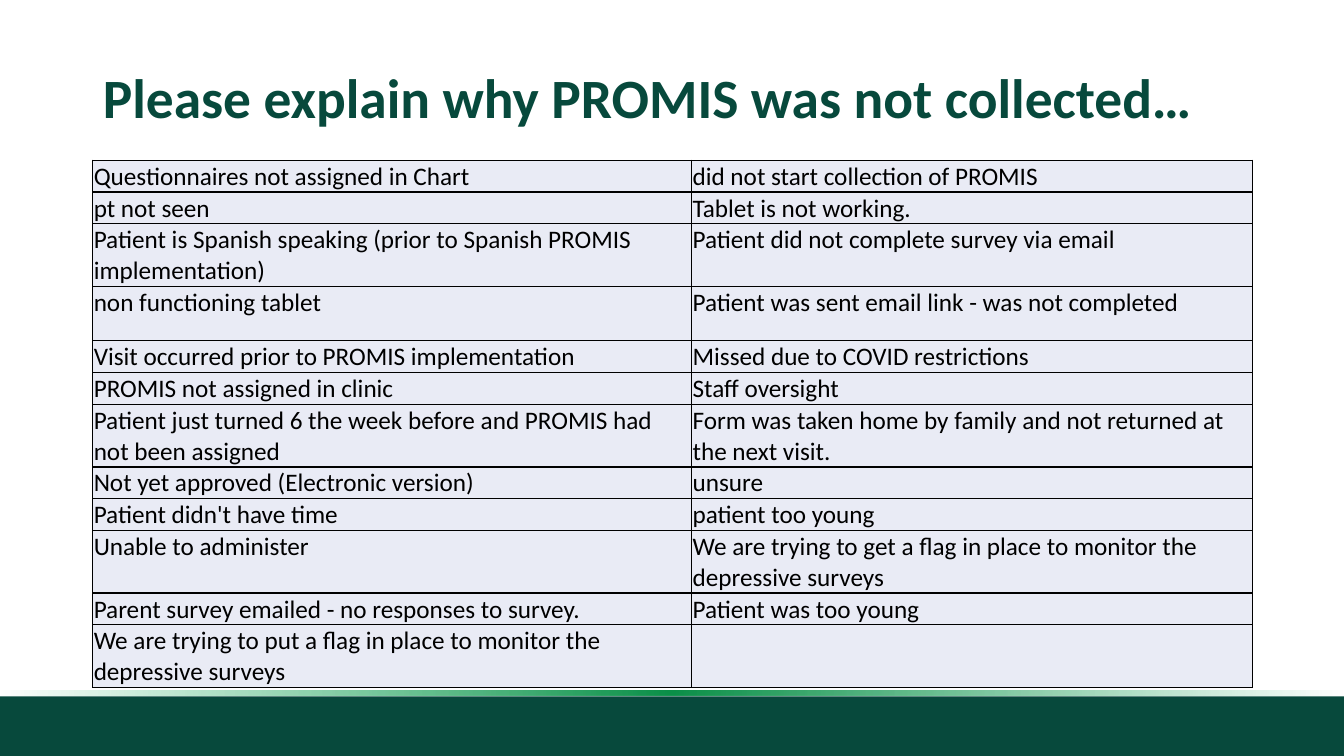
from lxml import etree
from pptx import Presentation
from pptx.dml.color import RGBColor
from pptx.enum.shapes import MSO_SHAPE
from pptx.enum.text import MSO_ANCHOR, MSO_AUTO_SIZE, PP_ALIGN
from pptx.oxml.ns import qn
from pptx.util import Inches, Pt

RECT = MSO_SHAPE.RECTANGLE
MIDDLE, TOP = MSO_ANCHOR.MIDDLE, MSO_ANCHOR.TOP
LEFT = PP_ALIGN.LEFT
FIXED = MSO_AUTO_SIZE.NONE

WIDTH, HEIGHT = Inches(13.33), Inches(7.5)
MARGIN, BODY = Inches(0.92), Inches(11.5)
COLORS = {
    "pine": "07493C",
    "ink": "000000",
    "cell": "E9EBF5",
    "start": "0D9D4F",
    "mid": "0C9049",
    "end": "0FAB56",
}
SHARES = (0.5165, 0.4835)
LOW, TALL = Inches(0.28), Inches(0.54)
TALL_ROWS = {2, 3, 6, 9, 11}
REASONS = [
    ("Questionnaires not assigned in Chart", "did not start collection of PROMIS"),
    ("pt not seen", "Tablet is not working."),
    ("Patient is Spanish speaking (prior to Spanish PROMIS implementation)",
     "Patient did not complete survey via email"),
    ("non functioning tablet", "Patient was sent email link - was not completed"),
    ("Visit occurred prior to PROMIS implementation",
     "Missed due to COVID restrictions"),
    ("PROMIS not assigned in clinic", "Staff oversight"),
    ("Patient just turned 6 the week before and PROMIS had not been assigned",
     "Form was taken home by family and not returned at the next visit."),
    ("Not yet approved (Electronic version)", "unsure"),
    ("Patient didn't have time", "patient too young"),
    ("Unable to administer",
     "We are trying to get a flag in place to monitor the depressive surveys"),
    ("Parent survey emailed - no responses to survey.", "Patient was too young"),
    ("We are trying to put a flag in place to monitor the depressive surveys", ""),
]


def color(name):
    return RGBColor.from_string(COLORS[name])


def write(frame, text, size=18, ink="ink", bold=False, spacing=None):
    para = frame.paragraphs[0]
    para.alignment = LEFT
    if spacing:
        para.line_spacing = spacing
    if not text:
        return
    run = para.add_run()
    run.text = text
    font = run.font
    font.name, font.size, font.bold = "Calibri", Pt(size), bold
    font.color.rgb = color(ink)


def add_band(slide, top, height):
    band = slide.shapes.add_shape(RECT, 0, top, WIDTH, height)
    band.shadow.inherit = False
    band.line.fill.background()
    band.fill.solid()
    band.fill.fore_color.rgb = color("pine")
    return band


def fade(band):
    """Fill the band with a green that is clear at both ends."""
    band.fill.gradient()
    band.fill.gradient_angle = 180
    stops = band.fill._fill._gradFill.find(qn("a:gsLst"))
    for stop in list(stops):
        stops.remove(stop)
    for place, name, alpha in ((0, "start", 0), (50, "mid", 100), (100, "end", 0)):
        stop = etree.SubElement(stops, qn("a:gs"), pos=str(place * 1000))
        tint = etree.SubElement(stop, qn("a:srgbClr"), val=COLORS[name])
        etree.SubElement(tint, qn("a:alpha"), val=str(alpha * 1000))


def add_title(slide, text):
    title = slide.shapes.title
    title.left, title.top = MARGIN, Inches(0.4)
    title.width, title.height = BODY, Inches(1.19)
    frame = title.text_frame
    frame.word_wrap, frame.auto_size = True, FIXED
    frame.vertical_anchor = MIDDLE
    write(frame, text, size=39.6, ink="pine", bold=True, spacing=0.9)


def add_borders(cell):
    props = cell._tc.get_or_add_tcPr()
    for place, side in enumerate(("lnL", "lnR", "lnT", "lnB")):
        line = etree.Element(qn(f"a:{side}"), w=str(Pt(1)))
        fill = etree.SubElement(line, qn("a:solidFill"))
        etree.SubElement(fill, qn("a:srgbClr"), val=COLORS["ink"])
        props.insert(place, line)


def format_cell(cell, text):
    cell.margin_left = cell.margin_right = cell.margin_top = Inches(0.01)
    cell.margin_bottom = 0
    cell.vertical_anchor = TOP
    cell.fill.solid()
    cell.fill.fore_color.rgb = color("cell")
    add_borders(cell)
    write(cell.text_frame, text)


def add_grid(slide, rows):
    heights = [TALL if i in TALL_ROWS else LOW for i in range(len(rows))]
    table = slide.shapes.add_table(
        len(rows), len(SHARES), MARGIN, Inches(1.59), BODY, sum(heights)).table
    table.first_row = table.horz_banding = False
    for column, share in zip(table.columns, SHARES):
        column.width = int(BODY * share)
    for row, height, texts in zip(table.rows, heights, rows):
        row.height = height
        for cell, text in zip(row.cells, texts):
            format_cell(cell, text)


def main():
    deck = Presentation()
    deck.slide_width, deck.slide_height = WIDTH, HEIGHT
    slide = deck.slides.add_slide(deck.slide_layouts[5])
    add_band(slide, Inches(6.91), Inches(0.6))
    fade(add_band(slide, Inches(6.85), Inches(0.05)))
    add_title(slide, "Please explain why PROMIS was not collected…")
    add_grid(slide, REASONS)
    deck.save("out.pptx")


if __name__ == "__main__":
    main()
